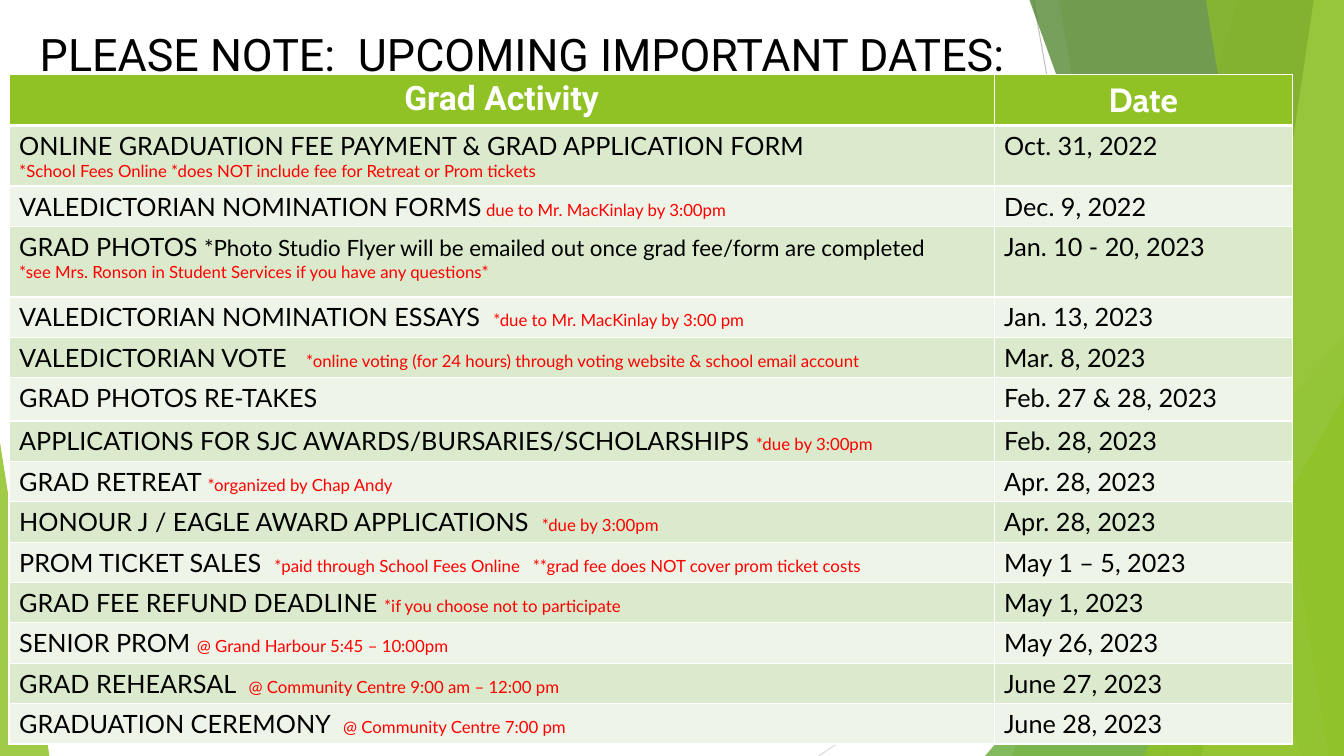
from lxml import etree
from pptx import Presentation
from pptx.dml.color import RGBColor
from pptx.enum.shapes import MSO_CONNECTOR, MSO_SHAPE
from pptx.enum.text import MSO_ANCHOR, PP_ALIGN
from pptx.oxml.ns import qn
from pptx.util import Inches, Pt

STRAIGHT = MSO_CONNECTOR.STRAIGHT
TRIANGLE = MSO_SHAPE.ISOSCELES_TRIANGLE
CENTER, LEFT = PP_ALIGN.CENTER, PP_ALIGN.LEFT

WHITE = RGBColor(0xFF, 0xFF, 0xFF)
BLACK = RGBColor(0, 0, 0)
RED = RGBColor(0xFF, 0, 0)
GREEN = RGBColor(0x90, 0xC2, 0x26)
MID_GREEN = RGBColor(0x54, 0xA0, 0x21)
DARK_GREEN = RGBColor(0x3F, 0x78, 0x19)
PALE_GREEN = RGBColor(0xC0, 0xE4, 0x74)
BANDS = RGBColor(0xDB, 0xE9, 0xCD), RGBColor(0xEE, 0xF4, 0xE8)
GREY = RGBColor(0xBF, 0xBF, 0xBF)
LIGHT_GREY = RGBColor(0xD9, 0xD9, 0xD9)

# Content: text styles are (size, colour)
MAIN, ASIDE, NOTE = (18, BLACK), (16, BLACK), (12, RED)
TITLE = [("PLEASE NOTE:  ", True), ("UPCOMING IMPORTANT DATES: ", False)]
HEADINGS = [("Grad Activity", "Roboto"), ("Date", "Cabin")]
# Each activity: lines of (text, style) runs, date, row height
ACTIVITIES = [
    ([[("ONLINE GRADUATION FEE PAYMENT & GRAD APPLICATION FORM", MAIN)],
      [("*School Fees Online *does NOT include fee for Retreat or Prom tickets", NOTE)]],
     "Oct. 31, 2022", 0.58),
    ([[("VALEDICTORIAN NOMINATION FORMS", MAIN), (" due to Mr. MacKinlay by 3:00pm", NOTE)]],
     "Dec. 9, 2022", 0.4),
    ([[("GRAD PHOTOS ", MAIN),
       ("*Photo Studio Flyer will be emailed out once grad fee/form are completed", ASIDE)],
      [("*see Mrs. Ronson in Student Services if you have any questions*", NOTE)]],
     "Jan. 10 - 20, 2023", 0.7),
    ([[("VALEDICTORIAN NOMINATION ESSAYS  ", MAIN), ("*due to Mr. MacKinlay by 3:00 pm", NOTE)]],
     "Jan. 13, 2023", 0.4),
    ([[("VALEDICTORIAN VOTE   ", MAIN),
       ("*online voting (for 24 hours) through voting website & school email account", NOTE)]],
     "Mar. 8, 2023", 0.4),
    ([[("GRAD PHOTOS RE-TAKES", MAIN)]], "Feb. 27 & 28, 2023", 0.43),
    ([[("APPLICATIONS FOR SJC AWARDS/BURSARIES/SCHOLARSHIPS ", MAIN), ("*due by 3:00pm", NOTE)]],
     "Feb. 28, 2023", 0.4),
    ([[("GRAD RETREAT ", MAIN), ("*organized by Chap Andy", NOTE)]], "Apr. 28, 2023", 0.4),
    ([[("HONOUR J / EAGLE AWARD APPLICATIONS  ", MAIN), ("*due by 3:00pm", NOTE)]],
     "Apr. 28, 2023", 0.4),
    ([[("PROM TICKET SALES  ", MAIN),
       ("*paid through School Fees Online   **grad fee does NOT cover prom ticket costs", NOTE)]],
     "May 1 – 5, 2023", 0.4),
    ([[("GRAD FEE REFUND DEADLINE ", MAIN), ("*if you choose not to participate", NOTE)]],
     "May 1, 2023", 0.4),
    ([[("SENIOR PROM ", MAIN), ("@ Grand Harbour 5:45 – 10:00pm", NOTE)]], "May 26, 2023", 0.4),
    ([[("GRAD REHEARSAL  ", MAIN), ("@ Community Centre 9:00 am – 12:00 pm", NOTE)]],
     "June 27, 2023", 0.4),
    ([[("GRADUATION CEREMONY  ", MAIN), ("@ Community Centre 7:00 pm", NOTE)]],
     "June 28, 2023", 0.4),
]
HEADER_HEIGHT = 0.5
COLUMN_WIDTHS = 9.77, 2.96
SLIDE_W, SLIDE_H = 13.33, 7.5

# Backdrop, from back to front
RAYS = [((10.25, 0), (11.58, SLIDE_H), GREY), ((SLIDE_W, 4.03), (8.12, SLIDE_H), LIGHT_GREY)]
# Bands reach the right edge: (top x, bottom x, colour, opacity %)
# Corner triangles: (left, top, width, apex, colour, opacity %)
BACKDROP = [
    (12.28, 10.04, GREEN, 30),
    (10.5, 11.83, GREEN, 20),
    (9.77, 3.33, 3.56, 1, MID_GREEN, 72),
    (10.21, 12.91, DARK_GREEN, 70),
    (13.03, 11.92, PALE_GREEN, 70),
    (11.96, 13.18, GREEN, 65),
    (11.34, 3.93, 1.99, 1, GREEN, 80),
    (0, 4.39, 0.49, 0, GREEN, 85),
]

prs = Presentation()
prs.slide_width, prs.slide_height = Inches(SLIDE_W), Inches(SLIDE_H)
slide = prs.slides.add_slide(prs.slide_layouts[5])
shapes = slide.shapes


def add_band(top_x, bottom_x):
    corners = [(SLIDE_W, 0), (SLIDE_W, SLIDE_H), (bottom_x, SLIDE_H)]
    builder = shapes.build_freeform(Inches(top_x), 0)
    builder.add_line_segments([(Inches(x), Inches(y)) for x, y in corners])
    return builder.convert_to_shape()


def add_corner(left, top, width, apex):
    corner = shapes.add_shape(TRIANGLE, Inches(left), Inches(top),
                              Inches(width), Inches(SLIDE_H - top))
    corner.adjustments[0] = apex
    return corner


def add_runs(paragraph, runs, font_name, bold=False):
    for text, (size, colour) in runs:
        run = paragraph.add_run()
        run.text = text
        font = run.font
        font.name, font.size, font.bold = font_name, Pt(size), bold
        font.color.rgb = colour


def style_cell(cell, fill, top=1, bottom=1):
    tc_pr = cell._tc.get_or_add_tcPr()
    for side, points in (("L", 1), ("R", 1), ("T", top), ("B", bottom)):
        border = etree.SubElement(tc_pr, qn(f"a:ln{side}"), w=str(Pt(points)))
        paint = etree.SubElement(border, qn("a:solidFill"))
        etree.SubElement(paint, qn("a:srgbClr"), val=str(WHITE))
    cell.fill.solid()
    cell.fill.fore_color.rgb = fill


# Thin rays
for start, end, colour in RAYS:
    ray = shapes.add_connector(STRAIGHT, *(Inches(v) for v in start + end))
    ray.line.color.rgb = colour
    ray.line.width = Pt(0.75)
    etree.SubElement(ray._element.spPr, qn("a:effectLst"))

# Translucent green facets
for *geometry, colour, opacity in BACKDROP:
    facet = add_band(*geometry) if len(geometry) == 2 else add_corner(*geometry)
    facet.shadow.inherit = False
    facet.line.fill.background()
    facet.fill.solid()
    facet.fill.fore_color.rgb = colour
    tint = facet._element.spPr.find(f"{qn('a:solidFill')}/{qn('a:srgbClr')}")
    etree.SubElement(tint, qn("a:alpha"), val=str(opacity * 1000))

# Title, brought in front of the backdrop
title = shapes.title
shapes._spTree.append(title._element)
title.left, title.top = Inches(0.09), Inches(0.21)
title.width, title.height = Inches(10.29), Inches(0.64)
title.text_frame.vertical_anchor = MSO_ANCHOR.MIDDLE
heading = title.text_frame.paragraphs[0]
heading.alignment = CENTER
add_runs(heading, [(text, (32, BLACK)) for text, _ in TITLE], "Roboto")
for run, (_, underlined) in zip(heading.runs, TITLE):
    run.font.underline = underlined

# Table of dates
heights = [HEADER_HEIGHT] + [height for *_, height in ACTIVITIES]
dates = shapes.add_table(len(heights), 2, Inches(0.09), Inches(0.74),
                         Inches(sum(COLUMN_WIDTHS)), Inches(sum(heights))).table
dates.horz_banding = False
for column, width in zip(dates.columns, COLUMN_WIDTHS):
    column.width = Inches(width)
for row, height in zip(dates.rows, heights):
    row.height = Inches(height)

for col, (text, font_name) in enumerate(HEADINGS):
    cell = dates.cell(0, col)
    style_cell(cell, GREEN, bottom=3)
    paragraph = cell.text_frame.paragraphs[0]
    paragraph.alignment = CENTER
    add_runs(paragraph, [(text, (24, WHITE))], font_name, bold=True)

for row, (activity, date, _) in enumerate(ACTIVITIES, start=1):
    for col, lines in enumerate((activity, [[(date, MAIN)]])):
        cell = dates.cell(row, col)
        style_cell(cell, BANDS[(row - 1) % 2], top=3 if row == 1 else 1)
        frame = cell.text_frame
        for i, runs in enumerate(lines):
            paragraph = frame.add_paragraph() if i else frame.paragraphs[0]
            paragraph.alignment = LEFT
            add_runs(paragraph, runs, "Lato")

prs.save("out.pptx")
